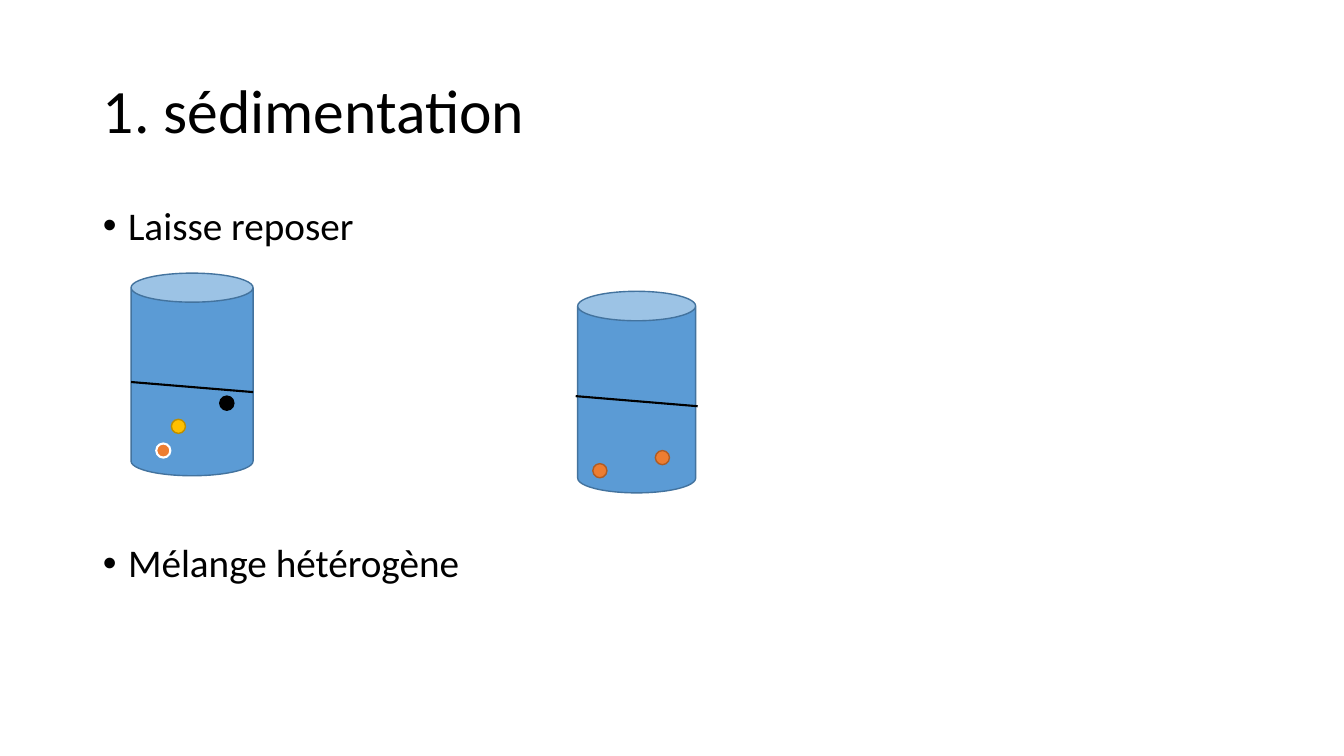
from lxml import etree
from pptx import Presentation
from pptx.dml.color import RGBColor
from pptx.enum.shapes import MSO_CONNECTOR as Line, MSO_SHAPE as Kind
from pptx.enum.text import MSO_ANCHOR as Anchor, MSO_AUTO_SIZE as Fit, PP_ALIGN as Align
from pptx.oxml.ns import qn
from pptx.util import Inches, Pt

WIDE, HIGH = 13.33, 7.5
LEFT, SPAN = 0.92, 11.5
DOT = 0.14


def paint(part, hue):
    """Give a font, fill or line a solid colour."""
    if hasattr(part, "solid"):
        part.solid()
        part.fore_color.rgb = RGBColor.from_string(hue)
    elif hasattr(part, "width"):
        paint(part.fill, hue)
    else:
        part.color.rgb = RGBColor.from_string(hue)


def draw(kind, box, fill, edge, weight=1):
    """Add a filled, outlined shape; box is in inches."""
    shape = slide.shapes.add_shape(kind, *map(Inches, box))
    shape.shadow.inherit = False
    paint(shape.fill, fill)
    paint(shape.line, edge)
    shape.line.width = Pt(weight)
    return shape


deck = Presentation()
deck.slide_width, deck.slide_height = Inches(WIDE), Inches(HIGH)
slide = deck.slides.add_slide(deck.slide_layouts[1])
title, body = slide.placeholders

# Title and list
texts = [
    (title, 0.4, 1.45, Anchor.MIDDLE, 44, ["1. sédimentation"]),
    (body, 2, 4.76, Anchor.TOP, 28, ["Laisse reposer", "Mélange hétérogène"]),
]
for holder, top, tall, anchor, size, lines in texts:
    holder.left, holder.top = Inches(LEFT), Inches(top)
    holder.width, holder.height = Inches(SPAN), Inches(tall)
    frame = holder.text_frame
    frame.text = "\n".join(lines)
    for name, value in {"auto_size": Fit.NONE, "word_wrap": True,
                        "vertical_anchor": anchor}.items():
        setattr(frame, name, value)
    for rank, para in enumerate(frame.paragraphs):
        if holder is body:
            props = para._p.get_or_add_pPr()
            props.set("marL", str(Inches(0.25)))
            props.set("indent", str(Inches(-0.25)))
            face = etree.SubElement(props, qn("a:buFont"))
            face.set("typeface", "Arial")
            etree.SubElement(props, qn("a:buChar")).set("char", "•")
        for name, value in {"alignment": Align.LEFT, "line_spacing": 0.9,
                            "space_before": Pt(210.5 * rank)}.items():
            setattr(para, name, value)
        para.font.name, para.font.size = "Calibri", Pt(size)
        paint(para.font, "000000")

# Jars, each with a water line above its grains
jars = [
    ((1.3, 2.71, 1.21, 2.01), 0.238, (1.3, 3.79), [
        (2.18, 3.93, "000000", "000000", 1),
        (1.7, 4.16, "FFC000", "BD8E00", 1),
        (1.55, 4.4, "ED7D31", "FFFFFF", 1.5)]),
    ((5.73, 2.89, 1.17, 2), 0.25, (5.71, 3.93), [
        (5.88, 4.6, "ED7D31", "AF5C24", 1),
        (6.5, 4.47, "ED7D31", "AF5C24", 1)]),
]
for box, rim, (x, y), grains in jars:
    jar = draw(Kind.CAN, box, "5B9BD5", "43739E")
    jar.adjustments[0] = rim
    water = slide.shapes.add_connector(
        Line.STRAIGHT, *map(Inches, (x, y, x + 1.21, y + 0.1)))
    paint(water.line, "000000")
    water.line.width = Pt(1.5)
    etree.SubElement(water._element.spPr, qn("a:effectLst"))
    for across, down, fill, edge, weight in grains:
        draw(Kind.FLOWCHART_CONNECTOR, (across, down, DOT, DOT),
             fill, edge, weight)

deck.save("out.pptx")
